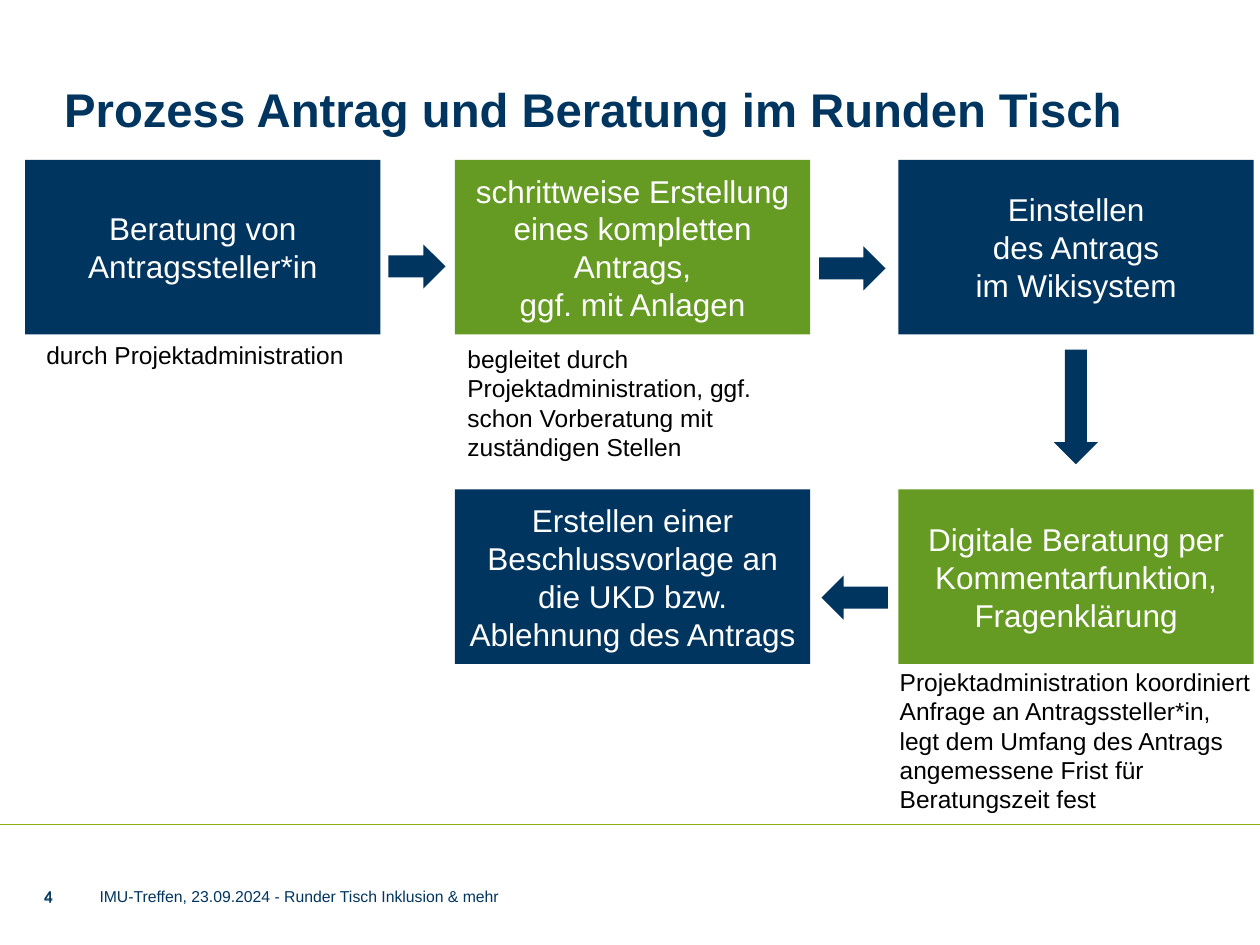
from lxml import etree
from pptx import Presentation
from pptx.dml.color import RGBColor
from pptx.enum.shapes import MSO_CONNECTOR, MSO_SHAPE
from pptx.enum.text import MSO_ANCHOR, MSO_AUTO_SIZE, PP_ALIGN
from pptx.oxml.ns import qn
from pptx.util import Pt

RECT, ARROW = MSO_SHAPE.RECTANGLE, MSO_SHAPE.RIGHT_ARROW
STRAIGHT = MSO_CONNECTOR.STRAIGHT
TOP, MIDDLE = MSO_ANCHOR.TOP, MSO_ANCHOR.MIDDLE
FIT = MSO_AUTO_SIZE.SHAPE_TO_FIT_TEXT
LEFT, CENTER = PP_ALIGN.LEFT, PP_ALIGN.CENTER

COLORS = {"navy": "003560", "green": "659B23", "rule": "8DAE10",
          "white": "FFFFFF", "black": "000000"}
COLUMNS = (14.4, 260, 513.4)
ROWS = (91.4, 279.7)
BOX_W, BOX_H = 203, 99.7
ARROW_H = 25.2


class ProcessSlide:
    """Style and drawing methods for the process slide."""

    font = "Arial"

    def __init__(self, prs):
        self.s = prs.slides.add_slide(prs.slide_layouts[6])

    def color(self, name):
        return RGBColor.from_string(COLORS[name])

    def set_text(self, tf, text, size, color, align=LEFT, bold=False):
        tf.word_wrap = True
        p = tf.paragraphs[0]
        p.text = text
        p.alignment = align
        for r in p.runs:
            r.font.name = self.font
            r.font.size = Pt(size)
            r.font.bold = bold
            r.font.color.rgb = self.color(color)
        return p

    def shape(self, kind, x, y, w, h, fill):
        sp = self.s.shapes.add_shape(kind, Pt(x), Pt(y), Pt(w), Pt(h))
        sp.shadow.inherit = False
        sp.fill.solid()
        sp.fill.fore_color.rgb = self.color(fill)
        sp.line.fill.background()
        return sp

    def step(self, col, row, fill, text):
        sp = self.shape(RECT, COLUMNS[col], ROWS[row], BOX_W, BOX_H, fill)
        sp.text_frame.vertical_anchor = MIDDLE
        self.set_text(sp.text_frame, text, 18, "white", CENTER)

    def arrow(self, x, y, length, rotation=0):
        sp = self.shape(ARROW, x, y, length, ARROW_H, "navy")
        sp.rotation = rotation

    def note(self, x, y, w, h, text):
        sp = self.s.shapes.add_textbox(Pt(x), Pt(y), Pt(w), Pt(h))
        self.set_text(sp.text_frame, text, 14, "black")
        sp.text_frame.auto_size = FIT

    def label(self, x, y, w, h, text, size=9, anchor=MIDDLE, bold=False):
        sp = self.s.shapes.add_textbox(Pt(x), Pt(y), Pt(w), Pt(h))
        tf = sp.text_frame
        tf.margin_left = tf.margin_right = tf.margin_top = tf.margin_bottom = 0
        tf.vertical_anchor = anchor
        return self.set_text(tf, text, size, "navy", bold=bold)

    def rule(self, y, w):
        c = self.s.shapes.add_connector(STRAIGHT, 0, Pt(y), Pt(w), Pt(y))
        c.line.color.rgb = self.color("rule")
        c.line.width = Pt(0.5)
        etree.SubElement(c._element.spPr, qn("a:effectLst"))


def main():
    prs = Presentation()
    prs.slide_width, prs.slide_height = Pt(720), Pt(540)
    s = ProcessSlide(prs)

    s.rule(470.9, 720)
    title = s.label(36.7, 42.5, 619.2, 49, "Prozess Antrag und Beratung im Runden Tisch",
                    size=27, anchor=TOP, bold=True)
    title.line_spacing = 1.1

    for col, row, fill, text in (
        (0, 0, "navy", "Beratung von Antragssteller*in"),
        (1, 0, "green", "schrittweise Erstellung eines kompletten Antrags,\nggf. mit Anlagen"),
        (2, 0, "navy", "Einstellen\ndes Antrags\nim Wikisystem"),
        (2, 1, "green", "Digitale Beratung per Kommentarfunktion, Fragenklärung"),
        (1, 1, "navy", "Erstellen einer Beschlussvorlage an die UKD bzw. Ablehnung des Antrags"),
    ):
        s.step(col, row, fill, text)

    for x, y, length, rotation in (
        (222, 139.7, 32.6, 0),
        (468, 140.7, 38, 0),
        (582, 219.9, 65.5, 90),
        (469.4, 328.9, 38, 180),
    ):
        s.arrow(x, y, length, rotation)

    for x, y, w, h, text in (
        (19.4, 190.8, 203, 24.2, "durch Projektadministration"),
        (260, 193, 215.3, 74.9, "begleitet durch Projektadministration, ggf. schon "
         "Vorberatung mit zuständigen Stellen"),
        (507, 377.5, 215.3, 92, "Projektadministration koordiniert Anfrage an "
         "Antragssteller*in, legt dem Umfang des Antrags angemessene Frist für "
         "Beratungszeit fest"),
    ):
        s.note(x, y, w, h, text)

    for y in (506.9, 506.2):
        s.label(25.2, y, 20.2, 11.5, "4")
    s.label(56.9, 506.2, 496, 11.5, "IMU-Treffen, 23.09.2024 - Runder Tisch Inklusion & mehr")
    prs.save("out.pptx")


if __name__ == "__main__":
    main()
